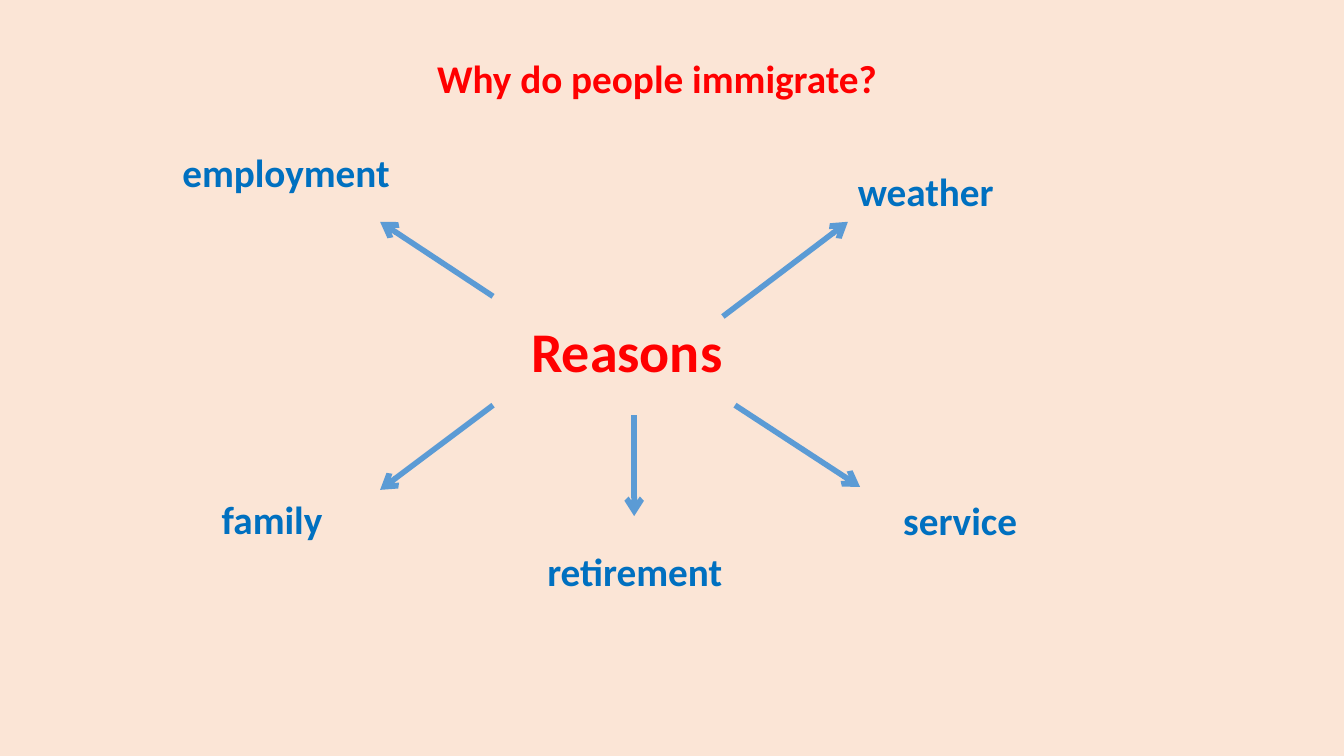
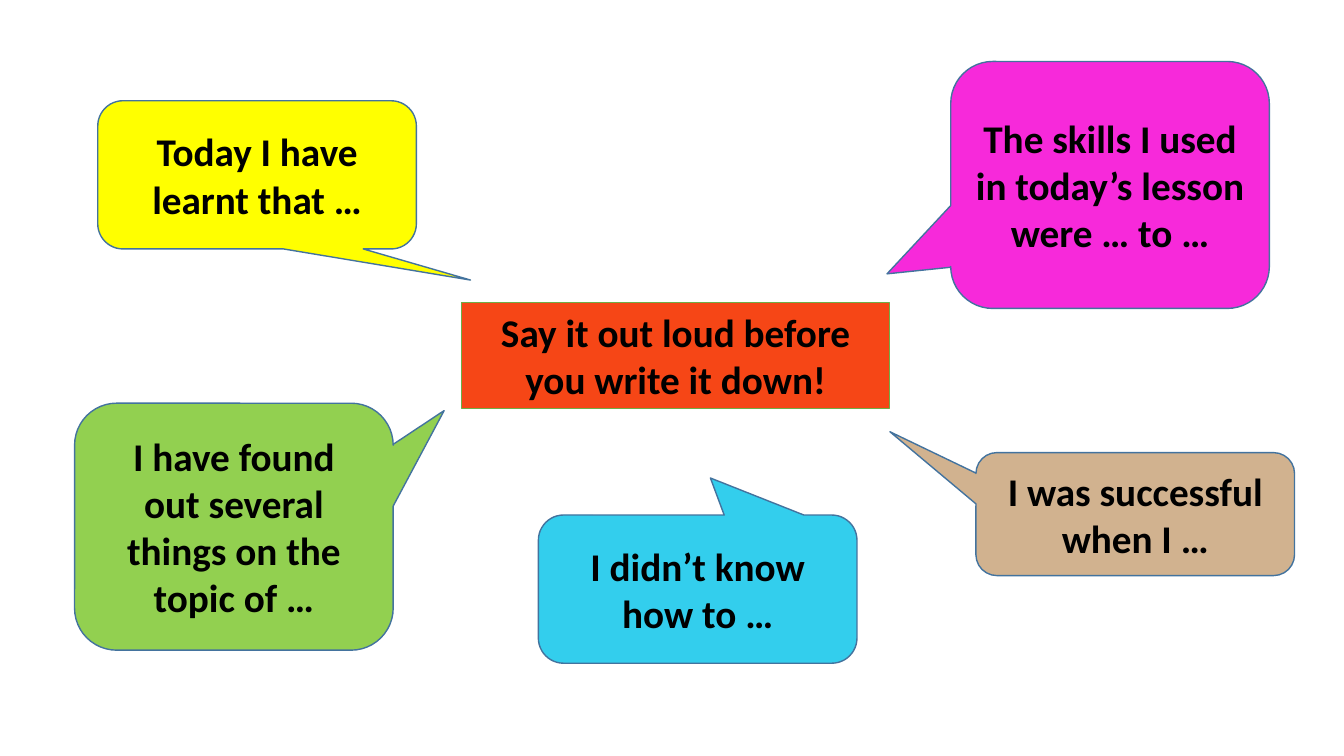
from lxml import etree
from pptx import Presentation
from pptx import util as u
from pptx.dml.color import RGBColor
from pptx.enum import shapes, text
from pptx.oxml.ns import qn

SCALE = 9144  # EMU in one px, 100 px to the inch
FONT = "Calibri"
PEACH = RGBColor(0xFB, 0xE5, 0xD6)
WHITE = RGBColor(0xFF, 0xFF, 0xFF)
BLACK = RGBColor(0, 0, 0)
RED = RGBColor(0xFF, 0, 0)
BLUE = RGBColor(0, 0x70, 0xC0)
SKY = RGBColor(0x5B, 0x9B, 0xD5)
STEEL = RGBColor(0x43, 0x73, 0x9E)
LEAF = RGBColor(0x70, 0xAD, 0x47)
LIME = RGBColor(0x92, 0xD0, 0x50)
CYAN = RGBColor(0x33, 0xCE, 0xED)
PINK = RGBColor(0xF7, 0x29, 0xDA)
TAN = RGBColor(0xD1, 0xB2, 0x8F)
YELLOW = RGBColor(0xFF, 0xFF, 0)
ORANGE = RGBColor(0xF6, 0x46, 0x16)

BUBBLE = shapes.MSO_SHAPE.ROUNDED_RECTANGULAR_CALLOUT
WIDE = 316  # width of every bubble
ROUND = 0.17  # corner radius of every bubble

# wording, left, top, width, height
LABELS = [
    ("employment", 171, 142, 228, 57),
    ("family", 210, 486, 121, 57),
    ("weather", 841, 161, 157, 57),
    ("service", 886, 487, 134, 57),
    ("retirement", 533, 538, 196, 57),
]
# start and end of each arrow
ARROWS = [
    (729, 402, 853, 483),
    (489, 402, 377, 486),
    (489, 294, 377, 220),
    (717, 314, 841, 220),
    (629, 412, 629, 512),
]
# wording, left, top, height, colour, tip of the pointer
BUBBLES = [
    ("I have found\vout several things on the topic of …", 74, 400, 245, LIME, (0.66, -0.47)),
    ("I didn’t know how to …", 534, 511, 147, CYAN, (0.04, -0.75)),
    ("The skills I used in today’s lesson were … to …", 943, 61, 245, PINK, (-0.7, 0.36)),
    ("I was successful when I …", 968, 449, 122, TAN, (-0.77, -0.67)),
    ("Today I have learnt that …", 97, 100, 147, YELLOW, (0.67, 0.71)),
]


def px(*sizes):
    return [u.Emu(size * SCALE) for size in sizes]


def add_page(deck, colour):
    page = deck.slides.add_slide(deck.slide_layouts[6])
    fill = page.background.fill
    fill.solid()
    fill.fore_color.rgb = colour
    return page


def write(shape, words, colour, size=28, align=None, **frame):
    for key, value in frame.items():
        setattr(shape.text_frame, key, value)
    para = shape.text_frame.paragraphs[0]
    para.text = words
    para.alignment = align
    style = {"name": FONT, "size": u.Pt(size), "bold": True}
    for run in para.runs:
        for key, value in style.items():
            setattr(run.font, key, value)
        run.font.color.rgb = colour
    return para


def add_label(page, words, box, colour=BLUE, size=28):
    label = page.shapes.add_textbox(*px(*box))
    write(label, words, colour, size, word_wrap=False,
          auto_size=text.MSO_AUTO_SIZE.SHAPE_TO_FIT_TEXT)


def add_title(page, words):
    title = page.shapes.add_textbox(*px(283, 54, 737, 134))
    para = write(title, words, RED, align=text.PP_ALIGN.CENTER, word_wrap=True)
    para.line_spacing = 0.9


def add_arrow(page, ends):
    arrow = page.shapes.add_connector(shapes.MSO_CONNECTOR.STRAIGHT, *px(*ends))
    arrow.line.color.rgb = SKY
    arrow.line.width = u.Pt(4)
    props = arrow.line._get_or_add_ln()
    etree.SubElement(props, qn("a:tailEnd"), type="arrow")
    etree.SubElement(arrow._element.spPr, qn("a:effectLst"))


def add_panel(page, kind, words, box, fill, line):
    panel = page.shapes.add_shape(kind, *px(*box))
    panel.shadow.inherit = False
    panel.fill.solid()
    panel.fill.fore_color.rgb = fill
    panel.line.color.rgb = line
    panel.line.width = u.Pt(1)
    write(panel, words, BLACK, align=text.PP_ALIGN.CENTER, word_wrap=True,
          vertical_anchor=text.MSO_ANCHOR.MIDDLE)
    return panel


def add_bubble(page, words, left, top, high, fill, tip):
    panel = add_panel(page, BUBBLE, words, (left, top, WIDE, high), fill, STEEL)
    for index, value in enumerate((*tip, ROUND)):
        panel.adjustments[index] = value


def build_reasons(deck):
    page = add_page(deck, PEACH)
    add_title(page, "Why do people immigrate?")
    add_label(page, "Reasons", (517, 309, 212, 77), RED, 40)
    for ends in ARROWS:
        add_arrow(page, ends)
    for words, *box in LABELS:
        add_label(page, words, box)


def build_review(deck):
    page = add_page(deck, WHITE)
    for bubble in BUBBLES:
        add_bubble(page, *bubble)
    add_panel(page, shapes.MSO_SHAPE.RECTANGLE, "Say it out loud before you write it down!",
              (458, 300, 424, 105), ORANGE, LEAF)


def main():
    deck = Presentation()
    deck.slide_width, deck.slide_height = px(1333, 750)
    build_reasons(deck)
    build_review(deck)
    deck.save("out.pptx")


if __name__ == "__main__":
    main()
